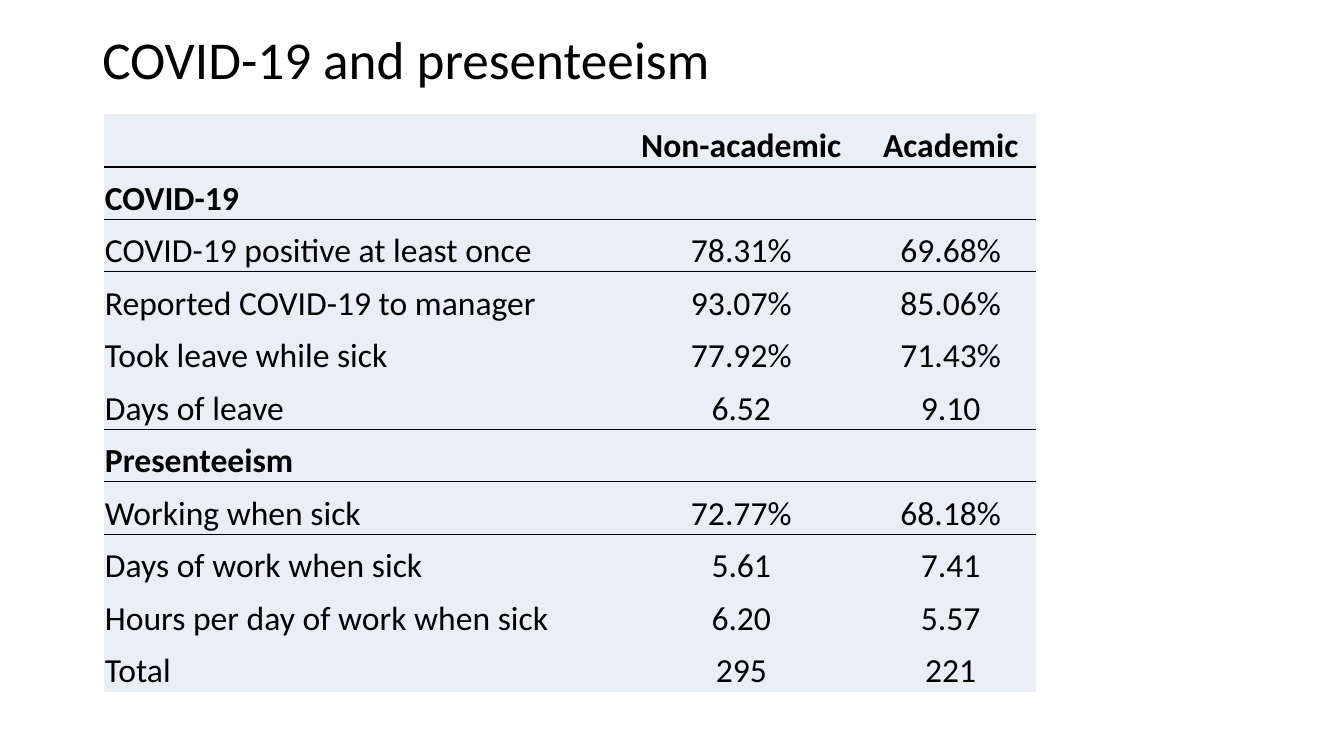
from dataclasses import dataclass

from lxml.etree import SubElement
from pptx import Presentation
from pptx.dml.color import RGBColor
from pptx.enum.text import MSO_ANCHOR as Anchor, PP_ALIGN as Align
from pptx.oxml.ns import qn
from pptx.util import Pt

PX = 9525  # EMU per px, 96 px to the inch
BLACK = RGBColor(0x00, 0x00, 0x00)
PALE_BLUE = RGBColor(0xEA, 0xEF, 0xF7)
FONT = "Calibri"
COLUMN_WIDTHS = (489, 236, 163)
ROW_HEIGHT = 50


@dataclass(frozen=True)
class Row:
    label: str
    non_academic: str = ""
    academic: str = ""
    bold: bool = False
    ruled: bool = False  # line below the row


ROWS = (
    Row("", "Non-academic", "Academic", bold=True, ruled=True),
    Row("COVID-19", bold=True, ruled=True),
    Row("COVID-19 positive at least once", "78.31%", "69.68%", ruled=True),
    Row("Reported COVID-19 to manager", "93.07%", "85.06%"),
    Row("Took leave while sick", "77.92%", "71.43%"),
    Row("Days of leave", "6.52", "9.10", ruled=True),
    Row("Presenteeism", bold=True, ruled=True),
    Row("Working when sick", "72.77%", "68.18%", ruled=True),
    Row("Days of work when sick", "5.61", "7.41"),
    Row("Hours per day of work when sick", "6.20", "5.57"),
    Row("Total", "295", "221"),
)


def write(tf, text: str, *, size: int, bold: bool = False,
          align: Align = Align.LEFT, spacing: float = 1.0) -> None:
    p = tf.paragraphs[0]
    p.alignment = align
    p.line_spacing = spacing
    r = p.add_run()
    r.text = text
    r.font.name = FONT
    r.font.size = Pt(size)
    r.font.bold = bold
    r.font.color.rgb = BLACK


def set_borders(cell, *, top: bool, bottom: bool) -> None:
    """Draw the chosen horizontal rules and hide the other borders."""
    tc_pr = cell._tc.get_or_add_tcPr()
    sides = {"a:lnL": False, "a:lnR": False, "a:lnT": top, "a:lnB": bottom}
    for tag, visible in sides.items():
        ln = SubElement(tc_pr, qn(tag), w=str(Pt(1)))
        if visible:
            fill = SubElement(ln, qn("a:solidFill"))
            SubElement(fill, qn("a:srgbClr"), val=str(BLACK))
        else:
            SubElement(ln, qn("a:noFill"))


def add_title(s, text: str) -> None:
    tf = s.shapes.add_textbox(88 * PX, 16 * PX, 1104 * PX, 86 * PX).text_frame
    tf.word_wrap = True
    tf.vertical_anchor = Anchor.MIDDLE
    write(tf, text, size=38, spacing=0.9)


def add_results_table(s, rows: tuple[Row, ...]) -> None:
    table = s.shapes.add_table(
        len(rows), len(COLUMN_WIDTHS), 99 * PX, 109 * PX,
        sum(COLUMN_WIDTHS) * PX, len(rows) * ROW_HEIGHT * PX).table
    table.first_row = table.horz_banding = False
    for column, width in zip(table.columns, COLUMN_WIDTHS):
        column.width = width * PX
    for i, row in enumerate(rows):
        for j, text in enumerate((row.label, row.non_academic, row.academic)):
            cell = table.cell(i, j)
            cell.margin_left = cell.margin_right = cell.margin_top = PX
            cell.margin_bottom = 0
            cell.vertical_anchor = Anchor.BOTTOM
            set_borders(cell, top=i > 0 and rows[i - 1].ruled, bottom=row.ruled)
            cell.fill.solid()
            cell.fill.fore_color.rgb = PALE_BLUE
            if text:
                write(cell.text_frame, text, size=24, bold=row.bold,
                      align=Align.CENTER if j else Align.LEFT)


def main() -> None:
    prs = Presentation()
    prs.slide_width, prs.slide_height = 1280 * PX, 720 * PX
    s = prs.slides.add_slide(prs.slide_layouts[6])
    add_title(s, "COVID-19 and presenteeism")
    add_results_table(s, ROWS)
    prs.save("out.pptx")


if __name__ == "__main__":
    main()
